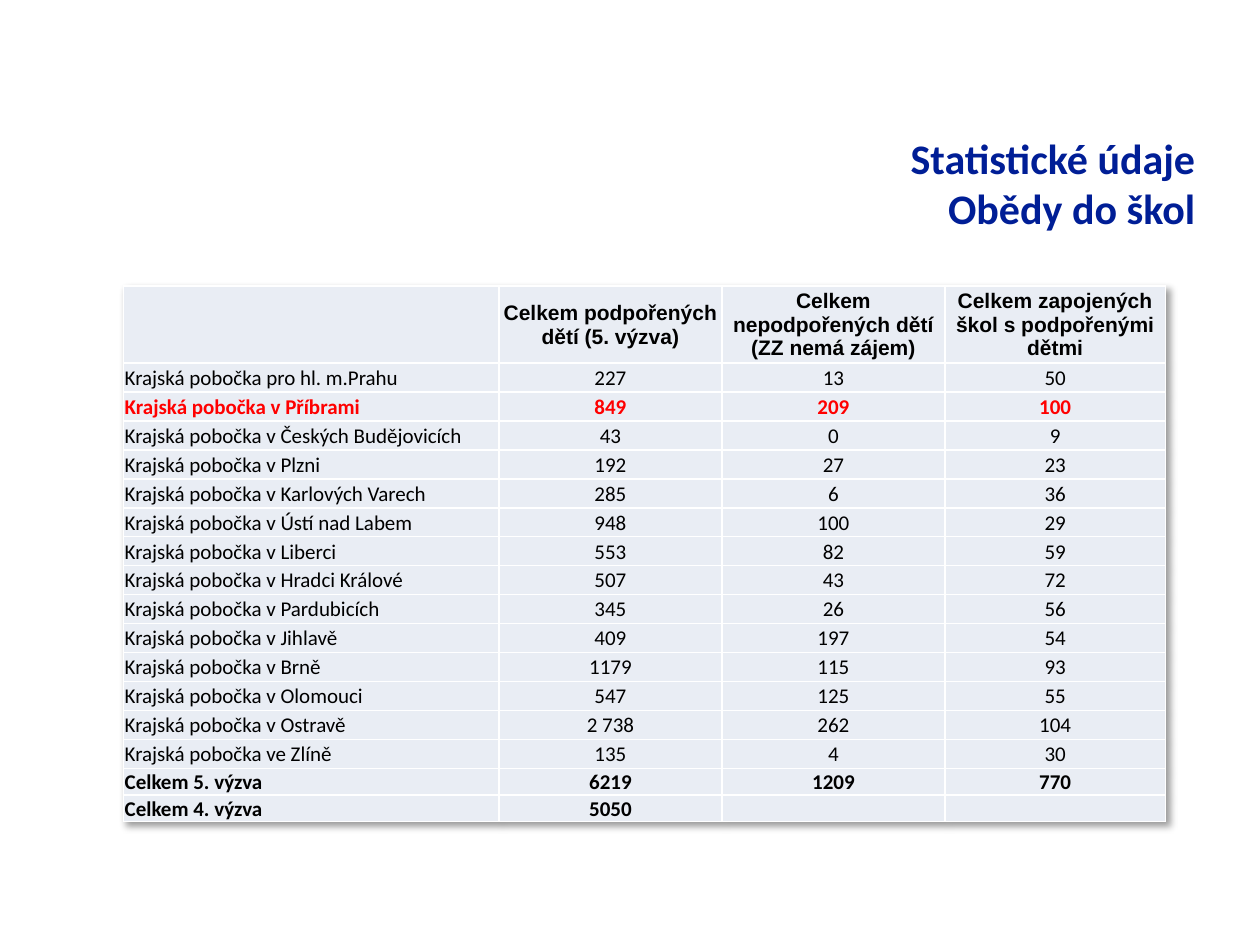
from lxml import etree
from pptx import Presentation
from pptx.dml.color import RGBColor
from pptx.enum.text import MSO_ANCHOR, PP_ALIGN
from pptx.oxml import parse_xml
from pptx.oxml.ns import nsdecls, qn
from pptx.util import Inches, Pt

LEFT, CENTER, RIGHT = PP_ALIGN.LEFT, PP_ALIGN.CENTER, PP_ALIGN.RIGHT
MIDDLE, BOTTOM = MSO_ANCHOR.MIDDLE, MSO_ANCHOR.BOTTOM

COLORS = {
    "title": "001E96",
    "text": "000000",
    "highlight": "FF0000",
    "cell": "E9EDF4",
    "border": "FFFFFF",
    "shadow": "000000",
}

HEADER = ["", "Celkem podpořených dětí (5. výzva)",
          "Celkem nepodpořených dětí (ZZ nemá zájem)",
          "Celkem zapojených škol s podpořenými dětmi"]
BRANCHES = [
    ("pro hl. m.Prahu", "227", "13", "50"),
    ("v Příbrami", "849", "209", "100"),
    ("v Českých Budějovicích", "43", "0", "9"),
    ("v Plzni", "192", "27", "23"),
    ("v Karlových Varech", "285", "6", "36"),
    ("v Ústí nad Labem", "948", "100", "29"),
    ("v Liberci", "553", "82", "59"),
    ("v Hradci Králové", "507", "43", "72"),
    ("v Pardubicích", "345", "26", "56"),
    ("v Jihlavě", "409", "197", "54"),
    ("v Brně", "1179", "115", "93"),
    ("v Olomouci", "547", "125", "55"),
    ("v Ostravě", "2 738", "262", "104"),
    ("ve Zlíně", "135", "4", "30"),
]
HIGHLIGHTED = "v Příbrami"
TOTALS = [
    ("Celkem 5. výzva", "6219", "1209", "770"),
    ("Celkem 4. výzva", "5050", "", ""),
]
COLUMN_WIDTHS = [2.98, 1.77, 1.77, 1.75]
HEADER_HEIGHT, BRANCH_HEIGHT, TOTAL_HEIGHT = 0.38, 0.23, 0.16
TABLE_TEXT_SIZE = 12


def set_font(paragraph, name, size, color, bold):
    font = paragraph.font
    font.name, font.size, font.bold = name, Pt(size), bold
    font.color.rgb = RGBColor.from_string(COLORS[color])


def add_title(slide):
    title = slide.shapes.add_textbox(Inches(2.42), Inches(1), Inches(7.24), Inches(1.17))
    title.text_frame.word_wrap = True
    paragraph = title.text_frame.paragraphs[0]
    paragraph.text = "Statistické údaje \vObědy do škol "
    paragraph.alignment = RIGHT
    set_font(paragraph, "Calibri", 24, "title", True)


def add_borders(cell):
    properties = cell._tc.get_or_add_tcPr()
    for side in ("lnL", "lnR", "lnT", "lnB"):
        properties.append(parse_xml(
            f'<a:{side} {nsdecls("a")} w="{Pt(1)}"><a:solidFill>'
            f'<a:srgbClr val="{COLORS["border"]}"/></a:solidFill></a:{side}>'))


def add_table_shadow(table):
    table._tbl.tblPr.insert(0, parse_xml(
        f'<a:effectLst {nsdecls("a")}><a:outerShdw blurRad="{Pt(4)}" dist="{Pt(3)}" '
        f'dir="2700000" algn="tl" rotWithShape="0"><a:srgbClr val="{COLORS["shadow"]}">'
        '<a:alpha val="40000"/></a:srgbClr></a:outerShdw></a:effectLst>'))


def fill_cell(cell, text, align, anchor, font, color, bold):
    add_borders(cell)
    cell.fill.solid()
    cell.fill.fore_color.rgb = RGBColor.from_string(COLORS["cell"])
    cell.margin_left = cell.margin_right = cell.margin_top = Inches(0.01)
    cell.margin_bottom = 0
    cell.vertical_anchor = anchor
    paragraph = cell.text_frame.paragraphs[0]
    paragraph.alignment = align
    set_font(paragraph, font, TABLE_TEXT_SIZE, color, bold)
    if text:
        paragraph.text = text
    else:
        # An empty cell takes its line height from the end mark
        end_mark = etree.SubElement(paragraph._p, qn("a:endParaRPr"))
        end_mark.set("sz", str(TABLE_TEXT_SIZE * 100))


def fill_row(table, index, height, texts, anchor=MIDDLE, font="Calibri",
             color="text", bold=False):
    table.rows[index].height = Inches(height)
    for column, text in enumerate(texts):
        align = CENTER if column else LEFT
        fill_cell(table.cell(index, column), text, align, anchor, font, color, bold)


def add_statistics(slide):
    row_count = 1 + len(BRANCHES) + len(TOTALS)
    height = HEADER_HEIGHT + len(BRANCHES) * BRANCH_HEIGHT + len(TOTALS) * TOTAL_HEIGHT
    table = slide.shapes.add_table(
        row_count, len(COLUMN_WIDTHS), Inches(0.98), Inches(2.27),
        Inches(sum(COLUMN_WIDTHS)), Inches(height)).table
    table.first_row = table.horz_banding = False
    add_table_shadow(table)
    for column, width in zip(table.columns, COLUMN_WIDTHS):
        column.width = Inches(width)

    # Header, regional branches, totals
    fill_row(table, 0, HEADER_HEIGHT, HEADER, font="Arial", bold=True)
    for index, (place, *counts) in enumerate(BRANCHES, start=1):
        marked = place == HIGHLIGHTED
        fill_row(table, index, BRANCH_HEIGHT, [f"Krajská pobočka {place}", *counts],
                 color="highlight" if marked else "text", bold=marked)
    for index, total in enumerate(TOTALS, start=1 + len(BRANCHES)):
        fill_row(table, index, TOTAL_HEIGHT, total, anchor=BOTTOM, bold=True)


def main():
    presentation = Presentation()
    presentation.slide_width, presentation.slide_height = Inches(10), Inches(7.5)
    slide = presentation.slides.add_slide(presentation.slide_layouts[6])
    add_title(slide)
    add_statistics(slide)
    presentation.save("out.pptx")


if __name__ == "__main__":
    main()
